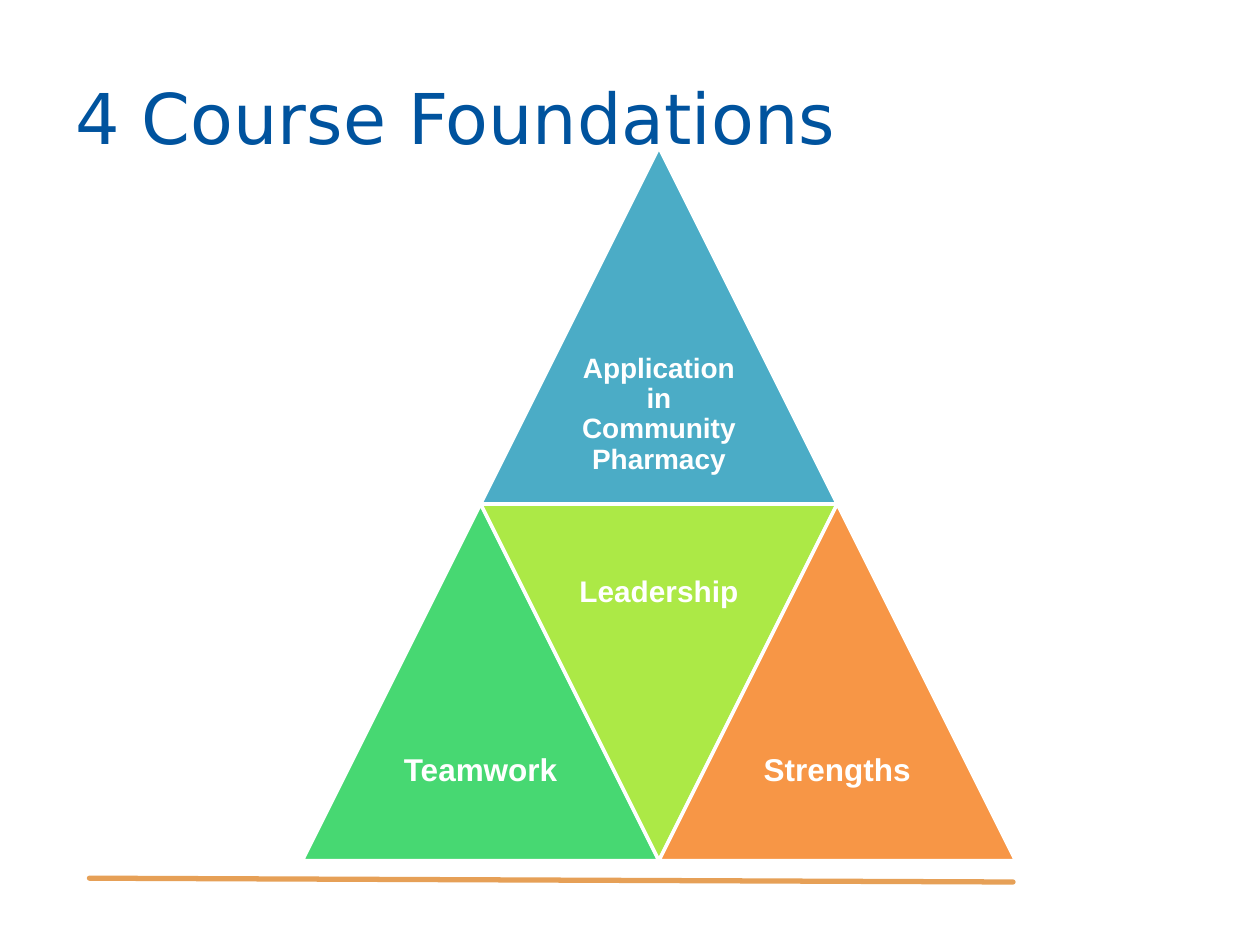
from lxml import etree
from pptx import Presentation
from pptx.dml.color import RGBColor
from pptx.enum import shapes, text
from pptx.oxml.ns import qn
from pptx.util import Inches, Pt

WHITE = "FFFFFF"


def color(hex_value):
    return RGBColor.from_string(hex_value)


def add_label(slide, left, top, width, height, margin, words, size, font_name, fill):
    box = slide.shapes.add_textbox(left, top, width, height)
    frame = box.text_frame
    frame.word_wrap = True
    frame.vertical_anchor = text.MSO_ANCHOR.MIDDLE
    frame.margin_left = frame.margin_right = margin
    frame.margin_top = frame.margin_bottom = margin
    paragraph = frame.paragraphs[0]
    paragraph.text = words
    paragraph.font.size = Pt(size)
    paragraph.font.name = font_name
    paragraph.font.color.rgb = color(fill)
    return paragraph


def add_base_line(slide, x1, y1, x2, y2):
    line = slide.shapes.add_connector(shapes.MSO_CONNECTOR.STRAIGHT, x1, y1, x2, y2)
    line.line.color.rgb = color("E6A057")
    line.line.width = Pt(3)
    line.line._get_or_add_ln().set("cap", "rnd")
    etree.SubElement(line._element.spPr, qn("a:effectLst"))


def add_foundation(slide, left, top, side, words, size, fill, inverted=False):
    """Add a triangle whose label fills the inscribed half-size square."""
    triangle = slide.shapes.add_shape(
        shapes.MSO_SHAPE.ISOSCELES_TRIANGLE, left, top, side, side)
    triangle.shadow.inherit = False
    triangle.rotation = 180 if inverted else 0
    triangle.fill.solid()
    triangle.fill.fore_color.rgb = color(fill)
    triangle.line.color.rgb = color(WHITE)
    triangle.line.width = Pt(2)

    half = side // 2
    label_top = top if inverted else top + half
    paragraph = add_label(slide, left + side // 4, label_top, half, half,
                          Inches(0.07), words, size, "Arial", WHITE)
    paragraph.alignment = text.PP_ALIGN.CENTER
    paragraph.line_spacing = 0.9
    paragraph.font.bold = True


def add_pyramid(slide, left, top, width):
    """Split a large triangle into four equal ones, on a grid of half sides."""
    side = width // 2
    foundations = [
        # column, row, words, size, fill, inverted
        (1, 0, "Application in Community Pharmacy", 16, "4BACC6", False),
        (0, 1, "Teamwork", 18, "47D872", False),
        (1, 1, "Leadership", 17, "ACE946", True),
        (2, 1, "Strengths", 18, "F79646", False),
    ]
    for column, row, words, size, fill, inverted in foundations:
        add_foundation(slide, left + column * side // 2, top + row * side, side,
                       words, size, fill, inverted)


def main():
    deck = Presentation()
    deck.slide_width, deck.slide_height = Inches(10), Inches(7.5)
    slide = deck.slides.add_slide(deck.slide_layouts[6])
    add_base_line(slide, Inches(0.71), Inches(6.97), Inches(8.04), Inches(7))
    add_pyramid(slide, Inches(2.4), Inches(1.17), Inches(5.66))
    add_label(slide, Inches(0.5), Inches(0.3), Inches(9), Inches(1.25), Inches(0.1),
              "4 Course Foundations", 40, "DejaVu Sans", "00539E")
    deck.save("out.pptx")


if __name__ == "__main__":
    main()
